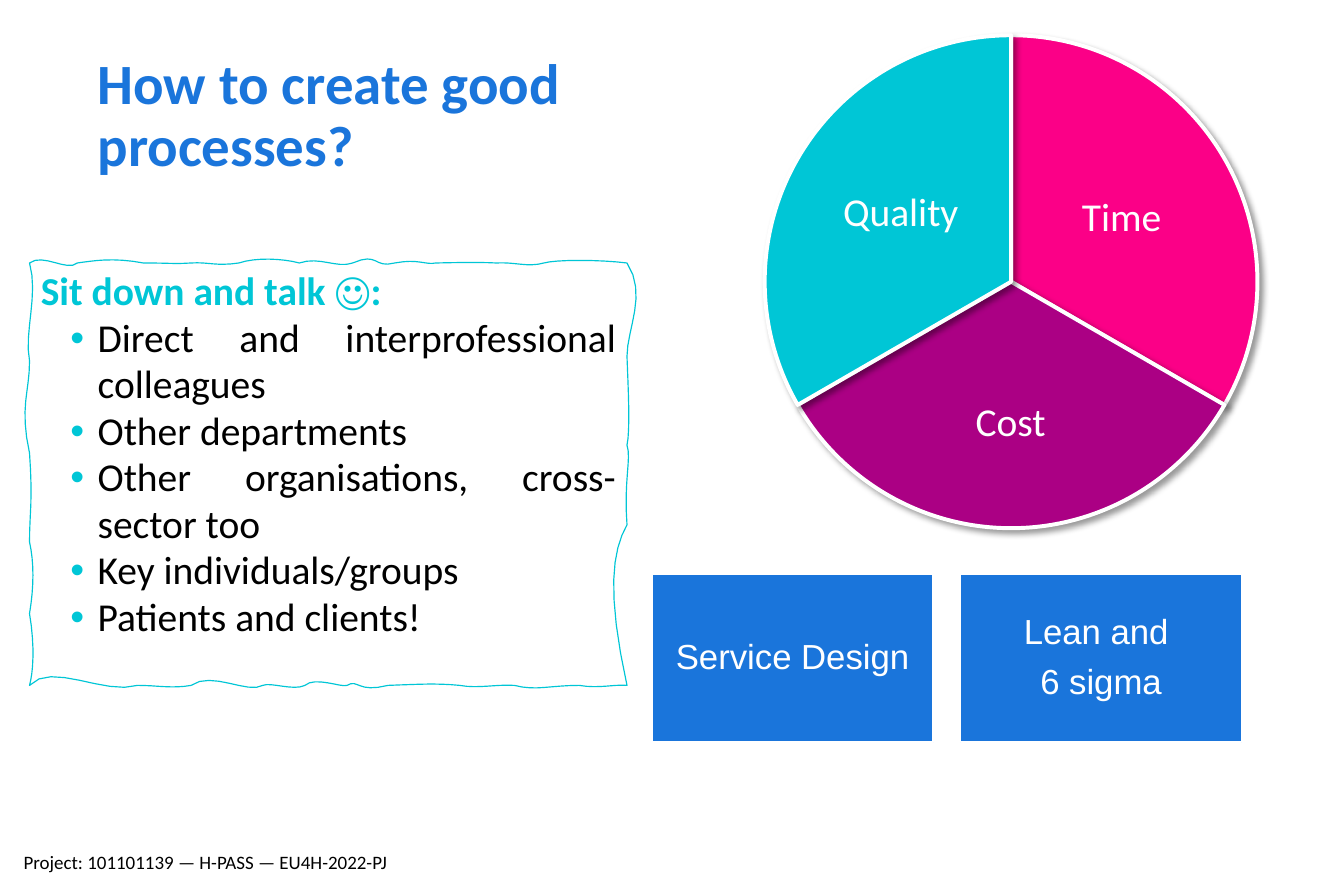
from lxml import etree
from pptx import Presentation
from pptx.dml.color import RGBColor
from pptx.enum import shapes, text
from pptx.oxml.ns import qn
from pptx.util import Inches, Pt

COLORS = {"blue": "1A75DB", "cyan": "00C6D6", "pink": "FB0087", "purple": "AB0084",
          "white": "FFFFFF", "black": "000000"}
TITLE = "How to create good processes?"
TALK_HEADING = "Sit down and talk ☺:"
TALK_PARTNERS = [
    "Direct and interprofessional colleagues",
    "Other departments",
    "Other organisations, cross-sector too",
    "Key individuals/groups",
    "Patients and clients!",
]
GOALS = [
    ("Time", "pink", (9.12, 1.2, 1.47, 1.44)),
    ("Cost", "purple", (7.9, 3.05, 1.96, 1.34)),
    ("Quality", "cyan", (7.18, 1.16, 1.47, 1.44)),
]
METHODS = [["Service Design"], ["Lean and ", "6 sigma"]]
PROJECT = "Project: 101101139 — H-PASS — EU4H-2022-PJ"

TALK_BOX = (0.26, 2.31, 5.25, 3.71)
PIE_BOX = (6.72, 0.31, 4.33, 4.33)
PIE_START = 270
METHOD_BOX = (5.73, 5.04, 2.47, 1.48)
METHOD_STEP = 2.71
CURVE_STEPS = 8
SKETCH_START = (0.26, 2.31)
SKETCH_CURVES = [
    (0.38, 2.22, 0.59, 2.39, 0.68, 2.31), (0.83, 2.29, 0.99, 2.26, 1.26, 2.31),
    (1.48, 2.31, 1.53, 2.32, 1.68, 2.31), (1.83, 2.3, 1.9, 2.34, 2.1, 2.31),
    (2.25, 2.26, 2.48, 2.27, 2.63, 2.31), (2.81, 2.25, 2.96, 2.36, 3.1, 2.31),
    (3.33, 2.21, 3.28, 2.36, 3.47, 2.31), (3.68, 2.27, 3.74, 2.33, 3.83, 2.31),
    (3.87, 2.31, 4.19, 2.3, 4.36, 2.31), (4.52, 2.3, 4.64, 2.35, 4.78, 2.31),
    (4.88, 2.28, 5.27, 2.28, 5.51, 2.31), (5.69, 2.58, 5.51, 2.89, 5.51, 3.13),
    (5.52, 3.39, 5.54, 3.78, 5.51, 3.91), (5.55, 4.03, 5.48, 4.22, 5.51, 4.61),
    (5.38, 4.84, 5.33, 5.2, 5.51, 6.02), (5.38, 6.01, 5.27, 6.05, 5.09, 6.02),
    (4.83, 6.02, 4.71, 6.07, 4.52, 6.02), (4.34, 6.01, 4.21, 6.05, 4.04, 6.02),
    (3.83, 6, 3.7, 6.01, 3.41, 6.02), (3.14, 6.09, 3.15, 5.96, 3.05, 6.02),
    (3, 6.04, 2.77, 5.94, 2.68, 6.02), (2.58, 6.07, 2.38, 5.99, 2.31, 6.02),
    (2.18, 6.1, 1.86, 5.89, 1.68, 6.02), (1.51, 6.05, 1.38, 6.02, 1.21, 6.02),
    (0.92, 6.11, 0.45, 5.81, 0.26, 6.02), (0.29, 5.91, 0.31, 5.69, 0.26, 5.39),
    (0.3, 5.15, 0.3, 4.94, 0.26, 4.76), (0.26, 4.49, 0.29, 4.41, 0.26, 3.98),
    (0.17, 3.57, 0.26, 3.45, 0.26, 3.17), (0.21, 2.92, 0.34, 2.59, 0.26, 2.31),
]


def rgb(name):
    return RGBColor.from_string(COLORS[name])


def inches(box):
    return [Inches(v) for v in box]


def fill_text(frame, lines, size, color, font="Calibri", bold=False, align=None,
              spacing=0.9, inset=None, anchor=text.MSO_ANCHOR.TOP):
    frame.word_wrap = True
    frame.vertical_anchor = anchor
    if inset is not None:
        frame.margin_left = frame.margin_right = Inches(inset)
        frame.margin_top = frame.margin_bottom = Inches(inset)
    frame.text = "\n".join(lines)
    for paragraph in frame.paragraphs:
        paragraph.alignment = align
        paragraph.line_spacing = spacing
        for run in paragraph.runs:
            run.font.size = Pt(size)
            run.font.name = font
            run.font.bold = bold
            run.font.color.rgb = rgb(color)


def add_text(slide, box, lines, size, color, **style):
    frame = slide.shapes.add_textbox(*inches(box)).text_frame
    fill_text(frame, lines, size, color, **style)
    return frame


def paint(shape, fill, line, width):
    shape.shadow.inherit = False
    if fill:
        shape.fill.solid()
        shape.fill.fore_color.rgb = rgb(fill)
    else:
        shape.fill.background()
    shape.line.color.rgb = rgb(line)
    shape.line.width = Pt(width)


def add_shadow(shape):
    effects = shape._element.spPr.find(qn("a:effectLst"))
    shadow = etree.SubElement(effects, qn("a:outerShdw"), blurRad=str(Pt(4)),
                              dist=str(Pt(3)), dir=str(45 * 60000), rotWithShape="0")
    color = etree.SubElement(shadow, qn("a:srgbClr"), val=COLORS["black"])
    etree.SubElement(color, qn("a:alpha"), val="40000")


def add_bullet(paragraph):
    props = paragraph._p.get_or_add_pPr()
    props.set("marL", str(Inches(0.5)))
    props.set("indent", str(Inches(-0.24)))
    color = etree.SubElement(props, qn("a:buClr"))
    etree.SubElement(color, qn("a:srgbClr"), val=COLORS["cyan"])
    etree.SubElement(props, qn("a:buFont"), typeface="Arial")
    etree.SubElement(props, qn("a:buChar"), char="•")


def curve_points(start, curves):
    for x1, y1, x2, y2, x3, y3 in curves:
        for step in range(1, CURVE_STEPS + 1):
            t = step / CURVE_STEPS
            weights = ((1 - t) ** 3, 3 * t * (1 - t) ** 2, 3 * t * t * (1 - t), t ** 3)
            xs, ys = (start[0], x1, x2, x3), (start[1], y1, y2, y3)
            yield tuple(Inches(sum(w * v for w, v in zip(weights, axis))) for axis in (xs, ys))
        start = (x3, y3)


def add_talk(slide):
    builder = slide.shapes.build_freeform(*inches(SKETCH_START))
    builder.add_line_segments(list(curve_points(SKETCH_START, SKETCH_CURVES)), close=True)
    paint(builder.convert_to_shape(), None, "cyan", 0.75)
    frame = add_text(slide, TALK_BOX, [TALK_HEADING] + TALK_PARTNERS, 25, "black", spacing=0.98)
    heading, *partners = frame.paragraphs
    for run in heading.runs:
        run.font.bold = True
        run.font.color.rgb = rgb("cyan")
    for partner in partners:
        partner.alignment = text.PP_ALIGN.JUSTIFY
        add_bullet(partner)


def add_goals(slide):
    sweep = 360 / len(GOALS)
    for i, (goal, color, label_box) in enumerate(GOALS):
        slice_ = slide.shapes.add_shape(shapes.MSO_SHAPE.PIE, *inches(PIE_BOX))
        for side in (0, 1):
            angle = (PIE_START + (i + side) * sweep) % 360
            slice_.adjustments[side] = angle * 0.6
        paint(slice_, color, "white", 2.5)
        add_shadow(slice_)
        add_text(slide, label_box, [goal], 25, "white", align=text.PP_ALIGN.CENTER,
                 inset=0.03, anchor=text.MSO_ANCHOR.MIDDLE)


def add_methods(slide):
    left, top, width, height = METHOD_BOX
    for i, lines in enumerate(METHODS):
        box = (left + i * METHOD_STEP, top, width, height)
        method = slide.shapes.add_shape(shapes.MSO_SHAPE.RECTANGLE, *inches(box))
        paint(method, "blue", "white", 1)
        fill_text(method.text_frame, lines, 22, "white", font="Arial", inset=0.09,
                  align=text.PP_ALIGN.CENTER, anchor=text.MSO_ANCHOR.MIDDLE)
        for paragraph in method.text_frame.paragraphs:
            paragraph.space_after = Pt(8)


def main():
    deck = Presentation()
    deck.slide_width, deck.slide_height = Inches(11.81), Inches(7.87)
    slide = deck.slides.add_slide(deck.slide_layouts[6])
    add_text(slide, (0.76, 0.44, 5.37, 1.09), [TITLE], 36, "blue", bold=True)
    add_talk(slide)
    add_goals(slide)
    add_methods(slide)
    add_text(slide, (0.11, 7.42, 3.63, 0.27), [PROJECT], 12, "black", spacing=1.0)
    deck.save("out.pptx")


if __name__ == "__main__":
    main()
